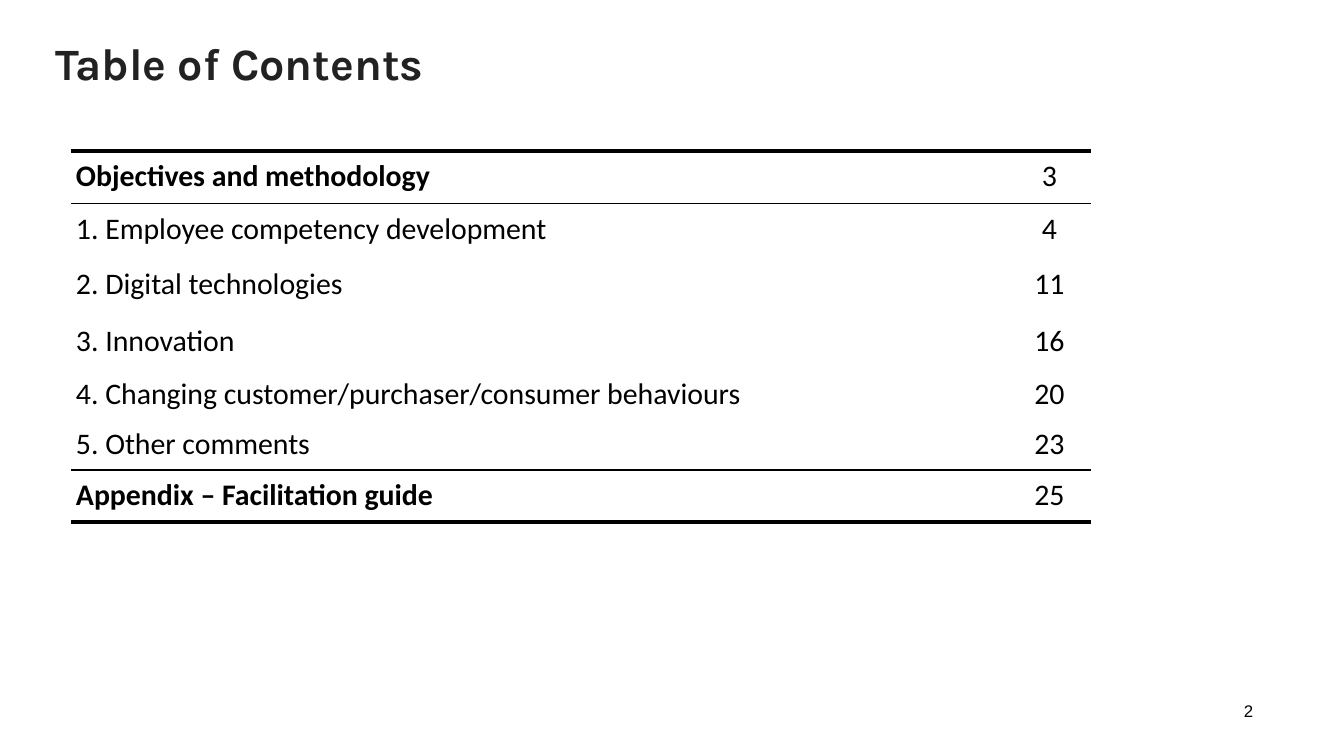
from lxml.etree import SubElement
from pptx import Presentation
from pptx.dml.color import RGBColor
from pptx.enum.text import MSO_ANCHOR, PP_ALIGN
from pptx.oxml.ns import qn
from pptx.util import Pt

PX = 6804  # EMU in one px


def write(frame, text, size, name, color="000000", bold=False):
    para = frame.paragraphs[0]
    span = para.add_run()
    span.text = text
    for key, value in {"size": Pt(size), "name": name, "bold": bold}.items():
        setattr(span.font, key, value)
    span.font.color.rgb = RGBColor.from_string(color)
    return para


def set_border(cell, side, width):
    """Draw one side of a cell in black; a width of 0 leaves it clear."""
    line = SubElement(cell._tc.get_or_add_tcPr(), qn(f"a:ln{side}"), w=str(Pt(width)))
    if width:
        fill = SubElement(line, qn("a:solidFill"))
        SubElement(fill, qn("a:srgbClr"), val="000000")
    else:
        SubElement(line, qn("a:noFill"))


deck = Presentation()
deck.slide_width, deck.slide_height = 1344 * PX, 756 * PX
page = deck.slides.add_slide(deck.slide_layouts[6])

# Title and page number
for text, place, insets, style in [
    ("Table of Contents", (47, 39, 1261, 48), (9, 5), (24, "Karla", "222223", True)),
    ("2", (1244, 698, 56, 25), (0, 0), (9, "Arial")),
]:
    box = page.shapes.add_textbox(*[length * PX for length in place])
    frame = box.text_frame
    side, end = [inset * PX for inset in insets]
    for key, value in {
        "word_wrap": True,
        "vertical_anchor": MSO_ANCHOR.MIDDLE,
        "margin_left": side,
        "margin_right": side,
        "margin_top": end,
        "margin_bottom": end,
    }.items():
        setattr(frame, key, value)
    write(frame, text, *style)

# Contents: entry, page, row height, is a numbered section
entries = [
    ("Objectives and methodology", "3", 52, False),
    ("1. Employee competency development", "4", 53, True),
    ("2. Digital technologies", "11", 57, True),
    ("3. Innovation", "16", 57, True),
    ("4. Changing customer/purchaser/consumer behaviours", "20", 50, True),
    ("5. Other comments", "23", 50, True),
    ("Appendix – Facilitation guide", "25", 52, False),
]
column_widths = [937, 83]
table_height = sum(entry[2] for entry in entries)
last = len(entries) - 1
rules = {0: 2.25, 1: 0.5, last: 1, last + 1: 2.25}  # line above each row number

table = page.shapes.add_table(
    len(entries), 2, 71 * PX, 151 * PX, sum(column_widths) * PX, table_height * PX
).table
table.first_row = table.horz_banding = False
for column, width in zip(table.columns, column_widths):
    column.width = width * PX

for row, (title, number, height, numbered) in enumerate(entries):
    table.rows[row].height = height * PX
    for column, text in enumerate([title, number]):
        cell = table.cell(row, column)
        for key, value in {
            "vertical_anchor": MSO_ANCHOR.MIDDLE,
            "margin_left": 5 * PX,
            "margin_right": 5 * PX,
            "margin_top": 3 * PX,
            "margin_bottom": 3 * PX,
        }.items():
            setattr(cell, key, value)
        bold = column == 0 and not numbered
        para = write(cell.text_frame, text, 16, "Calibri", bold=bold)
        para.line_spacing = 0.9
        para.alignment = PP_ALIGN.CENTER if column else PP_ALIGN.LEFT
        if numbered:
            para.space_after = Pt(2)
        for side, width in {
            "L": 0,
            "R": 0,
            "T": rules.get(row, 0),
            "B": rules.get(row + 1, 0),
        }.items():
            set_border(cell, side, width)
        cell.fill.background()

deck.save("out.pptx")
